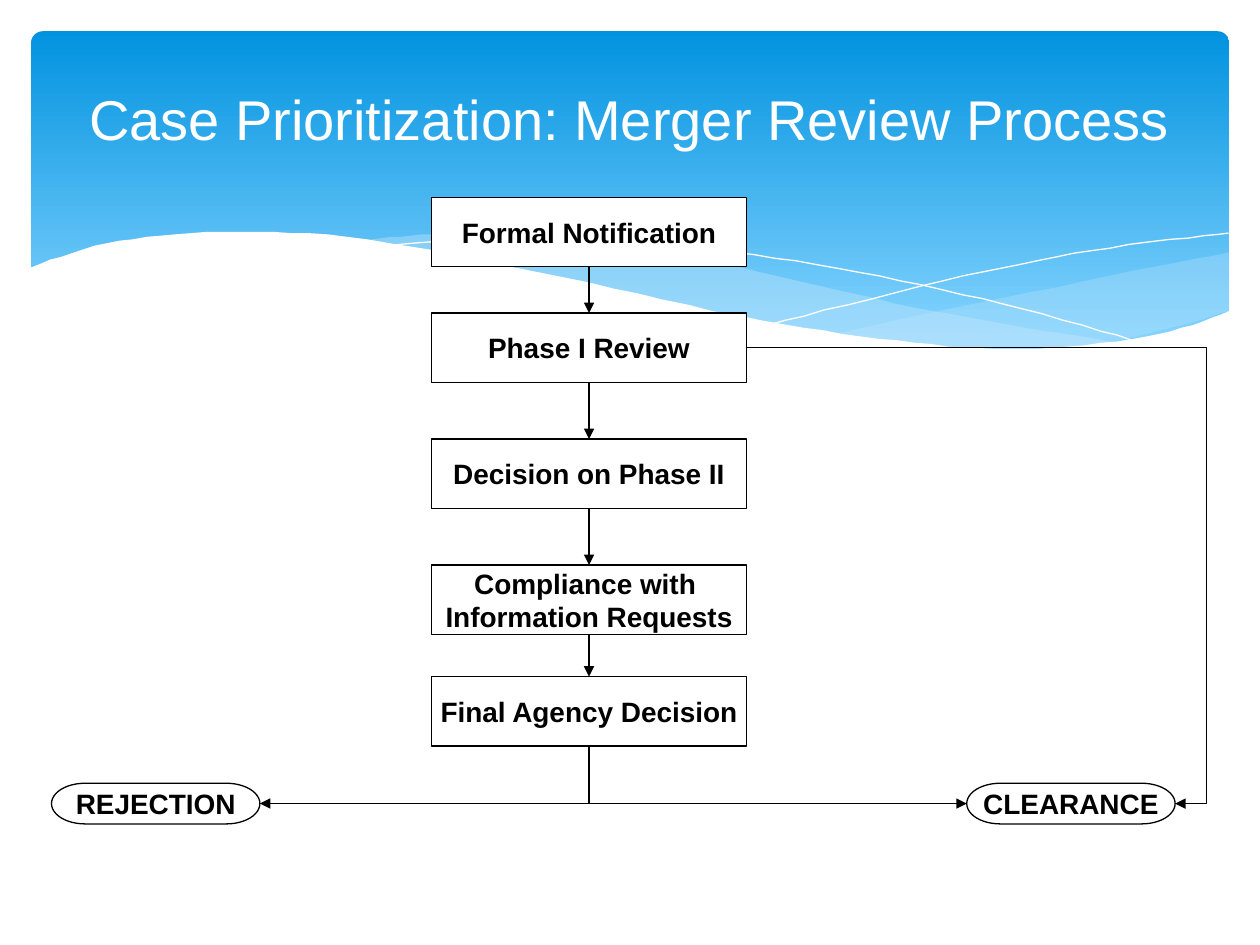
import dataclasses
from typing import Optional

import lxml.etree
import pptx
import pptx.dml.color
import pptx.enum.shapes
import pptx.enum.text
import pptx.oxml.ns
import pptx.util

Cm = pptx.util.Cm
Pt = pptx.util.Pt
RGBColor = pptx.dml.color.RGBColor
ShapeKind = pptx.enum.shapes.MSO_SHAPE
qn = pptx.oxml.ns.qn
Point = tuple[float, float]

WHITE = RGBColor(0xFF, 0xFF, 0xFF)
BLACK = RGBColor(0x00, 0x00, 0x00)
DEEP_BLUE = RGBColor(0x02, 0x93, 0xE0)
SKY_BLUE = RGBColor(0x83, 0xD3, 0xFE)
PALE_BLUE = RGBColor(0xC6, 0xE7, 0xFC)
FONT = "Arial"

WAVE_UNIT = Cm(0.0254)  # wave points are in hundredths of an inch
CURVE_STEPS = 8
TOP, LEFT, BOTTOM, RIGHT = range(4)  # connection sites


@dataclasses.dataclass
class Wave:
    edges: list[list[Point]]  # each edge is a smooth curve through its points
    fill: Optional[RGBColor] = None  # without a fill the wave is a thin line
    opacity: int = 100


@dataclasses.dataclass
class Node:
    lines: list[str]
    left: float
    top: float
    width: float = 6.35
    height: float = 1.4
    kind: ShapeKind = ShapeKind.FLOWCHART_PROCESS


@dataclasses.dataclass
class Flow:
    start: str
    start_site: int
    end: str
    end_site: int
    preset: str = "line"
    arrow: str = "tailEnd"
    bend: Optional[int] = None


WAVES = [
    Wave([[(976, 200), (861, 223), (661, 265)],
          [(661, 265), (757, 276), (863, 275), (976, 247)]], PALE_BLUE, 29),
    Wave([[(893, 273), (741, 247), (629, 222), (528, 200), (420, 187), (344, 186), (286, 191)],
          [(286, 191), (383, 207), (491, 232), (618, 258), (736, 275), (818, 278), (893, 273)]],
         PALE_BLUE, 40),
    Wave([[(309, 195), (416, 187), (533, 194), (665, 213), (795, 241), (907, 272)]]),
    Wave([[(613, 257), (748, 223), (866, 199), (975, 185)]]),
    Wave([[(23, 213), (85, 193), (177, 184), (292, 190), (447, 220), (603, 254),
           (726, 272), (823, 277), (920, 265), (977, 246)],
          [(977, 329), (23, 329)]], WHITE),
]

STEP_LEFT = 8.7
OUTCOME = dict(top=15.79, width=4.2, height=0.82, kind=ShapeKind.FLOWCHART_TERMINATOR)
NODES = {
    "notification": Node(["Formal Notification"], STEP_LEFT, 3.98),
    "phase 1": Node(["Phase I Review"], STEP_LEFT, 6.31),
    "phase 2": Node(["Decision on Phase II"], STEP_LEFT, 8.85),
    "compliance": Node(["Compliance with ", "Information Requests"], STEP_LEFT, 11.39),
    "decision": Node(["Final Agency Decision"], STEP_LEFT, 13.64),
    "rejection": Node(["REJECTION"], left=1.04, **OUTCOME),
    "clearance": Node(["CLEARANCE"], left=19.49, **OUTCOME),
}

STEPS = ["notification", "phase 1", "phase 2", "compliance", "decision"]
FLOWS = [Flow(above, BOTTOM, below, TOP) for above, below in zip(STEPS, STEPS[1:])] + [
    Flow("rejection", RIGHT, "decision", BOTTOM, "bentConnector2", "headEnd"),
    Flow("clearance", LEFT, "decision", BOTTOM, "bentConnector2", "headEnd"),
    Flow("phase 1", RIGHT, "clearance", RIGHT, "bentConnector3", bend=107400),
]


def smooth(points: list[Point]) -> list[Point]:
    """Sample a Catmull-Rom curve through the points."""
    padded = [points[0], *points, points[-1]]
    samples = [points[0]]
    for quad in zip(padded, padded[1:], padded[2:], padded[3:]):
        for step in range(1, CURVE_STEPS + 1):
            t = step / CURVE_STEPS
            samples.append(tuple(
                b + t * (c - a) / 2 + t**2 * (2 * a - 5 * b + 4 * c - d) / 2
                + t**3 * (3 * b - a - 3 * c + d) / 2
                for a, b, c, d in zip(*quad)))
    return samples


def add_run(paragraph, text: str, size: int, color: RGBColor, bold: bool) -> None:
    paragraph.alignment = pptx.enum.text.PP_ALIGN.CENTER
    run = paragraph.add_run()
    run.text = text
    run.font.name = FONT
    run.font.size = Pt(size)
    run.font.bold = bold
    run.font.color.rgb = color


def add_banner(slide) -> None:
    banner = slide.shapes.add_shape(
        ShapeKind.ROUNDED_RECTANGLE, Cm(0.63), Cm(0.63), Cm(24.15), Cm(6.86))
    banner.adjustments[0] = 0.034
    banner.shadow.inherit = False
    banner.line.fill.background()
    banner.fill.gradient()
    banner.fill.gradient_angle = 270
    colors = [(0, DEEP_BLUE), (0.9, SKY_BLUE)]
    for stop, (position, color) in zip(banner.fill.gradient_stops, colors):
        stop.position = position
        stop.color.rgb = color


def add_wave(slide, wave: Wave) -> None:
    start, *others = [point for edge in wave.edges for point in smooth(edge)]
    builder = slide.shapes.build_freeform(*start, scale=WAVE_UNIT)
    builder.add_line_segments(others, close=wave.fill is not None)
    shape = builder.convert_to_shape()
    shape.shadow.inherit = False
    if wave.fill is None:
        shape.fill.background()
        shape.line.color.rgb = WHITE
        shape.line.width = Pt(0)
        return
    shape.line.fill.background()
    shape.fill.solid()
    shape.fill.fore_color.rgb = wave.fill
    if wave.opacity < 100:
        color = shape._element.spPr.find(qn("a:solidFill"))[0]
        lxml.etree.SubElement(color, qn("a:alpha"), val=str(wave.opacity * 1000))


def format_title(slide) -> None:
    title = slide.shapes.title
    slide.shapes._spTree.append(title._element)  # in front of the backdrop
    title.left, title.top, title.width, title.height = Cm(0.63), Cm(0.76), Cm(24.13), Cm(3.23)
    title.text_frame.vertical_anchor = pptx.enum.text.MSO_ANCHOR.MIDDLE
    add_run(title.text_frame.paragraphs[0],
            "Case Prioritization: Merger Review Process", 32, WHITE, False)


def add_node(slide, node: Node):
    shape = slide.shapes.add_shape(
        node.kind, Cm(node.left), Cm(node.top), Cm(node.width), Cm(node.height))
    shape.shadow.inherit = False
    shape.fill.solid()
    shape.fill.fore_color.rgb = WHITE
    shape.line.color.rgb = BLACK
    shape.line.width = Pt(0.75)
    frame = shape.text_frame
    frame.word_wrap = False
    frame.vertical_anchor = pptx.enum.text.MSO_ANCHOR.MIDDLE
    for index, line in enumerate(node.lines):
        paragraph = frame.add_paragraph() if index else frame.paragraphs[0]
        add_run(paragraph, line, 16, BLACK, True)
    return shape


def add_flow(slide, flow: Flow, shapes: dict) -> None:
    connector = slide.shapes.add_connector(pptx.enum.shapes.MSO_CONNECTOR.STRAIGHT, 0, 0, 0, 0)
    connector.begin_connect(shapes[flow.start], flow.start_site)
    connector.end_connect(shapes[flow.end], flow.end_site)
    connector.line.color.rgb = BLACK
    connector.line.width = Pt(0.75)
    properties = connector._element.spPr
    geometry = properties.find(qn("a:prstGeom"))
    geometry.set("prst", flow.preset)
    if flow.bend is not None:
        lxml.etree.SubElement(geometry.find(qn("a:avLst")), qn("a:gd"),
                              name="adj1", fmla=f"val {flow.bend}")
    lxml.etree.SubElement(properties.find(qn("a:ln")), qn(f"a:{flow.arrow}"), type="triangle")
    lxml.etree.SubElement(properties, qn("a:effectLst"))


def main() -> None:
    presentation = pptx.Presentation()
    presentation.slide_width, presentation.slide_height = Cm(25.4), Cm(19.05)
    slide = presentation.slides.add_slide(presentation.slide_layouts[5])

    # Backdrop and title
    add_banner(slide)
    for wave in WAVES:
        add_wave(slide, wave)
    format_title(slide)

    # Flow chart
    shapes = {name: add_node(slide, node) for name, node in NODES.items()}
    for flow in FLOWS:
        add_flow(slide, flow, shapes)

    presentation.save("out.pptx")


if __name__ == "__main__":
    main()
